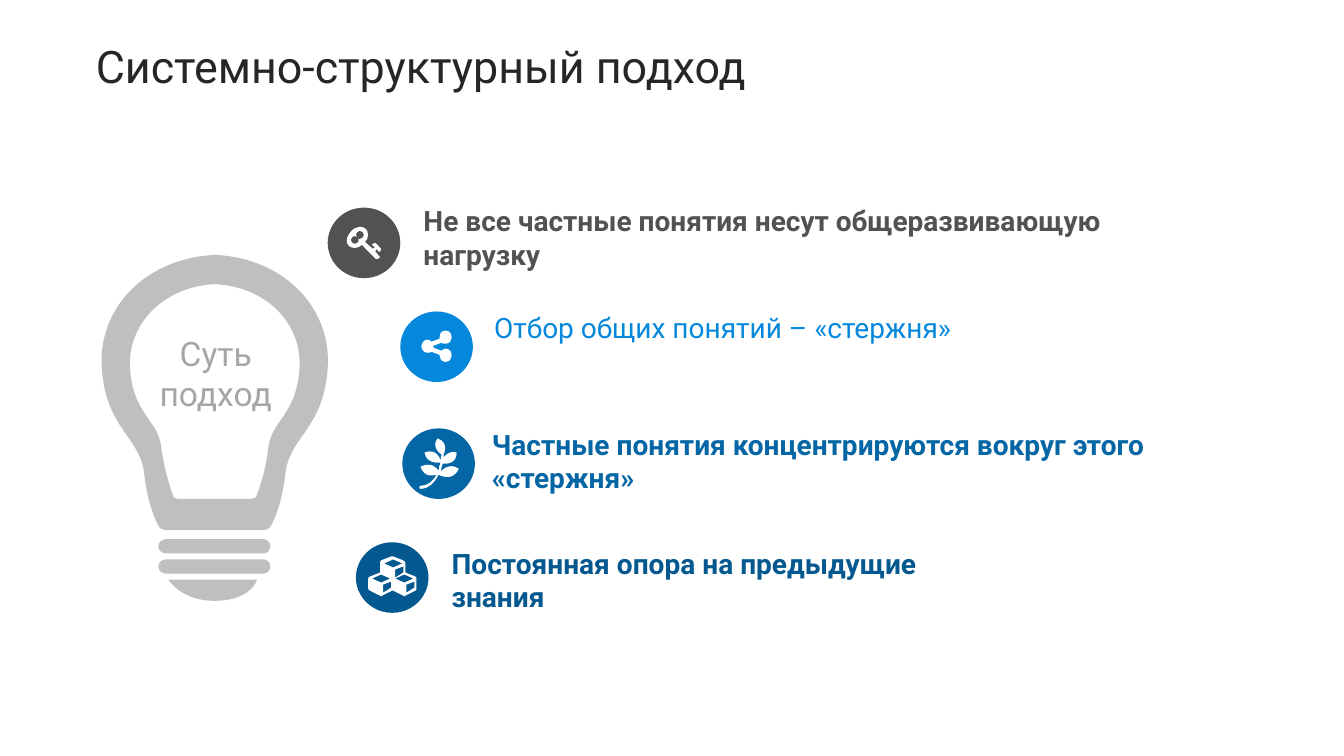
import dataclasses

import pptx
import pptx.dml.color
import pptx.enum.shapes
import pptx.enum.text
import pptx.oxml.ns
import pptx.util

Inches = pptx.util.Inches
qn = pptx.oxml.ns.qn
Point = tuple[float, float]

GREY = "BFBFBF"
WHITE = "FFFFFF"
CIRCLE_WIDTH, CIRCLE_HEIGHT = 0.72, 0.7

# Outlines in inches: M starts a contour, L draws lines, C draws cubic curves
BULB = """M 2.16 2.53 L 2.11 2.53 C 1.39 2.58 0.97 3.1 1.01 3.65 1.05 4.26 1.39 4.33 1.43 4.7
1.47 5.06 1.58 5.23 1.58 5.23 1.6 5.25 1.62 5.26 1.64 5.26 L 2.61 5.26
C 2.64 5.26 2.66 5.25 2.68 5.23 2.68 5.23 2.79 5.06 2.83 4.7
2.87 4.33 3.21 4.26 3.25 3.65 3.29 3.1 2.87 2.58 2.16 2.53
M 2.97 3.66 C 2.94 4.12 2.69 4.17 2.66 4.45 2.63 4.72 2.54 4.93 2.54 4.93
2.53 4.94 2.51 4.95 2.49 4.95 L 1.77 4.95 C 1.75 4.95 1.73 4.94 1.72 4.93
1.72 4.93 1.64 4.72 1.6 4.45 1.58 4.17 1.32 4.12 1.29 3.66
1.26 3.25 1.58 2.86 2.11 2.82 L 2.15 2.82 C 2.69 2.86 3 3.25 2.97 3.66"""
BULB_TIP = "M 1.67 5.75 L 2.55 5.75 C 2.55 5.75 2.49 5.97 2.1 5.96 1.79 5.95 1.67 5.75 1.67 5.75"
KEY = """M 3.76 2.5 C 3.76 2.5 3.74 2.48 3.74 2.47 L 3.72 2.49 3.76 2.54
C 3.76 2.54 3.77 2.55 3.77 2.55 3.77 2.56 3.75 2.57 3.74 2.57 L 3.73 2.57 3.59 2.43
C 3.57 2.45 3.54 2.46 3.52 2.46 3.47 2.46 3.44 2.43 3.44 2.39 3.44 2.32 3.51 2.25 3.57 2.25
3.62 2.25 3.65 2.28 3.65 2.33 3.65 2.36 3.64 2.38 3.62 2.4 L 3.7 2.47 3.72 2.45
C 3.71 2.45 3.69 2.43 3.69 2.43 3.69 2.42 3.71 2.41 3.72 2.41
3.73 2.41 3.78 2.47 3.78 2.47 3.78 2.48 3.77 2.5 3.76 2.5
M 3.57 2.29 C 3.55 2.29 3.53 2.31 3.53 2.33 3.53 2.34 3.53 2.34 3.54 2.35
3.53 2.35 3.52 2.34 3.52 2.34 3.5 2.34 3.48 2.36 3.48 2.38 3.48 2.4 3.5 2.42 3.52 2.42
3.54 2.42 3.56 2.4 3.56 2.38 3.56 2.38 3.56 2.37 3.55 2.37 3.56 2.37 3.56 2.37 3.57 2.37
3.59 2.37 3.61 2.35 3.61 2.33 3.61 2.31 3.59 2.29 3.57 2.29"""
SHARE = """M 4.48 3.53 C 4.48 3.56 4.46 3.59 4.42 3.59 4.38 3.59 4.36 3.56 4.36 3.53
L 4.36 3.52 4.28 3.49 C 4.27 3.5 4.26 3.5 4.24 3.5 4.21 3.5 4.18 3.47 4.18 3.44
4.18 3.4 4.21 3.37 4.24 3.37 4.26 3.37 4.27 3.38 4.28 3.39 L 4.36 3.36 4.36 3.35
C 4.36 3.31 4.38 3.28 4.42 3.28 4.46 3.28 4.48 3.31 4.48 3.35
4.48 3.38 4.46 3.41 4.42 3.41 4.4 3.41 4.39 3.41 4.38 3.4 L 4.3 3.43 4.3 3.45 4.38 3.48
C 4.39 3.47 4.4 3.46 4.42 3.46 4.46 3.46 4.48 3.49 4.48 3.53"""
BRANCH = """M 4.35 4.71 C 4.31 4.79 4.25 4.85 4.17 4.85 4.16 4.85 4.16 4.84 4.16 4.83
4.16 4.82 4.16 4.82 4.17 4.82 4.24 4.82 4.29 4.78 4.33 4.71 4.29 4.72 4.21 4.74 4.17 4.63
4.28 4.58 4.33 4.64 4.35 4.67 4.35 4.64 4.36 4.62 4.37 4.59 4.37 4.59 4.23 4.61 4.21 4.49
4.34 4.44 4.37 4.57 4.37 4.57 4.37 4.55 4.38 4.51 4.38 4.51 4.38 4.51 4.27 4.44 4.34 4.35
4.46 4.39 4.4 4.51 4.4 4.51 L 4.4 4.54 C 4.4 4.54 4.45 4.46 4.53 4.49
4.53 4.62 4.39 4.6 4.39 4.6 4.38 4.62 4.38 4.65 4.37 4.68 4.37 4.68 4.45 4.58 4.55 4.65
4.49 4.79 4.35 4.71 4.35 4.71"""
CUBES_EDGE = """M 4.13 5.83 C 4.13 5.85 4.13 5.86 4.12 5.86 L 4.02 5.91
C 4.02 5.92 4 5.92 4 5.91 L 3.9 5.86 3.89 5.86 3.79 5.91 C 3.79 5.92 3.77 5.92 3.77 5.91
L 3.67 5.86 C 3.66 5.86 3.65 5.85 3.65 5.83 L 3.65 5.75 C 3.65 5.73 3.66 5.72 3.67 5.72
L 3.77 5.68 3.77 5.58 C 3.77 5.58 3.77 5.57 3.78 5.56 L 3.88 5.52 3.9 5.52 4 5.56
C 4.02 5.57 4.02 5.58 4.02 5.58 L 4.02 5.68 4.12 5.72 C 4.13 5.72 4.13 5.73 4.13 5.75"""


def cube_faces(x: float, y: float) -> str:
    """Cut out the top and right faces of a cube whose top face is centred on x, y."""
    top = [(-0.09, 0), (0, -0.04), (0.09, 0), (0, 0.04)]
    right = [(0.1, 0.03), (0.02, 0.06), (0.02, 0.14), (0.1, 0.09)]
    return " ".join(
        "M " + " L ".join(f"{x + dx:.2f} {y + dy:.2f}" for dx, dy in face)
        for face in (top, right)
    )


def screw_band(top: float) -> str:
    middle, bottom = round(top + 0.07, 2), round(top + 0.14, 2)
    return (f"M 2.68 {middle} C 2.68 {middle + 0.04:.2f} 2.65 {bottom} 2.62 {bottom} L 1.64 {bottom} "
            f"C 1.61 {bottom} 1.57 {middle + 0.04:.2f} 1.57 {middle} "
            f"1.57 {middle - 0.04:.2f} 1.61 {top} 1.64 {top} L 2.62 {top} "
            f"C 2.65 {top} 2.68 {middle - 0.04:.2f} 2.68 {middle}")


CUBES = " ".join([CUBES_EDGE, cube_faces(3.78, 5.74), cube_faces(3.9, 5.59), cube_faces(4.01, 5.74)])


@dataclasses.dataclass(frozen=True)
class Label:
    lines: tuple[str, ...]
    left: float
    top: float
    width: float
    height: float
    color: str
    size: int = 20
    bold: bool = False


@dataclasses.dataclass(frozen=True)
class Principle:
    label: Label
    circle_left: float
    circle_top: float
    icon: str


TITLE = Label(("Системно-структурный подход",), 0.95, 0.39, 8.22, 0.52, "262626", 32)
ESSENCE = Label(("Суть", "подход"), 1.23, 3.25, 1.82, 0.91, "A6A6A6", 24)
PRINCIPLES = [
    Principle(Label(("Не все частные понятия несут общеразвивающую нагрузку",),
                    4.2, 2.02, 6.95, 0.67, "525252", bold=True), 3.25, 2.06, KEY),
    Principle(Label(("Отбор общих понятий – «стержня»",),
                    4.9, 3.08, 5, 0.34, "0588DC"), 3.97, 3.09, SHARE),
    Principle(Label(("Частные понятия концентрируются вокруг этого «стержня»",),
                    4.88, 4.24, 7.37, 0.67, "0466A4", bold=True), 3.99, 4.25, BRANCH),
    Principle(Label(("Постоянная опора на предыдущие знания",),
                    4.48, 5.42, 5.13, 0.67, "03588F", bold=True), 3.53, 5.38, CUBES),
]


def rgb(color: str) -> pptx.dml.color.RGBColor:
    return pptx.dml.color.RGBColor.from_string(color)


def paint(shape, color: str) -> None:
    shape.fill.solid()
    shape.fill.fore_color.rgb = rgb(color)
    shape.line.fill.background()
    shape.shadow.inherit = False


def outline_points(outline: str) -> list[tuple[str, Point]]:
    """List every point of an outline with the command it belongs to."""
    result, command, pending = [], "", []
    for token in outline.split():
        if token in "MLC":
            command = token
            continue
        pending.append(Inches(float(token)))
        if len(pending) == 2:
            result.append((command, tuple(pending)))
            pending = []
    return result


def bend_lines(shape, commands: list[str]) -> None:
    """Merge each three line segments of a C command into one cubic curve."""
    segments = list(shape._element.iter(qn("a:lnTo")))
    curved = [segment for segment, command in zip(segments, commands) if command == "C"]
    for curve, *others in zip(curved[::3], curved[1::3], curved[2::3]):
        curve.tag = qn("a:cubicBezTo")
        for other in others:
            curve.append(other[0])
            other.getparent().remove(other)


def draw_outline(slide, outline: str, color: str) -> None:
    points = outline_points(outline)
    starts = [index for index, (command, _) in enumerate(points) if command == "M"]
    builder = slide.shapes.build_freeform(*points[0][1])
    for start, end in zip(starts, starts[1:] + [len(points)]):
        if start:
            builder.move_to(*points[start][1])
        builder.add_line_segments([point for _, point in points[start + 1:end]], close=True)
    shape = builder.convert_to_shape()
    bend_lines(shape, [command for command, _ in points if command != "M"])
    paint(shape, color)


def draw_label(slide, label: Label, frame_format: dict, align=None) -> None:
    box = slide.shapes.add_textbox(*map(Inches, (label.left, label.top, label.width, label.height)))
    frame = box.text_frame
    for name, value in frame_format.items():
        setattr(frame, name, value)
    font_format = {"name": "Roboto", "size": pptx.util.Pt(label.size), "bold": label.bold}
    for index, line in enumerate(label.lines):
        paragraph = frame.add_paragraph() if index else frame.paragraphs[0]
        paragraph.alignment = align
        run = paragraph.add_run()
        run.text = line
        for name, value in font_format.items():
            setattr(run.font, name, value)
        run.font.color.rgb = rgb(label.color)


def main() -> None:
    deck = pptx.Presentation()
    deck.slide_width, deck.slide_height = Inches(13.33), Inches(7.5)
    slide = deck.slides.add_slide(deck.slide_layouts[6])
    no_margins = {f"margin_{side}": 0 for side in ("left", "top", "right", "bottom")}
    wrapped = {"word_wrap": True, "auto_size": pptx.enum.text.MSO_AUTO_SIZE.SHAPE_TO_FIT_TEXT}
    middle = {"word_wrap": False, "vertical_anchor": pptx.enum.text.MSO_ANCHOR.MIDDLE}

    # Wording of the principles
    for principle in PRINCIPLES:
        draw_label(slide, principle.label, no_margins | wrapped)

    # Light bulb with its screw base
    for outline in (screw_band(5.55), screw_band(5.35), BULB_TIP, BULB):
        draw_outline(slide, outline, GREY)
    draw_label(slide, ESSENCE, wrapped, pptx.enum.text.PP_ALIGN.CENTER)

    # Icons of the principles
    for principle in PRINCIPLES:
        circle = slide.shapes.add_shape(
            pptx.enum.shapes.MSO_SHAPE.OVAL, Inches(principle.circle_left),
            Inches(principle.circle_top), Inches(CIRCLE_WIDTH), Inches(CIRCLE_HEIGHT))
        paint(circle, principle.label.color)
        draw_outline(slide, principle.icon, WHITE)

    # Title
    draw_label(slide, TITLE, no_margins | middle)
    deck.save("out.pptx")


if __name__ == "__main__":
    main()
